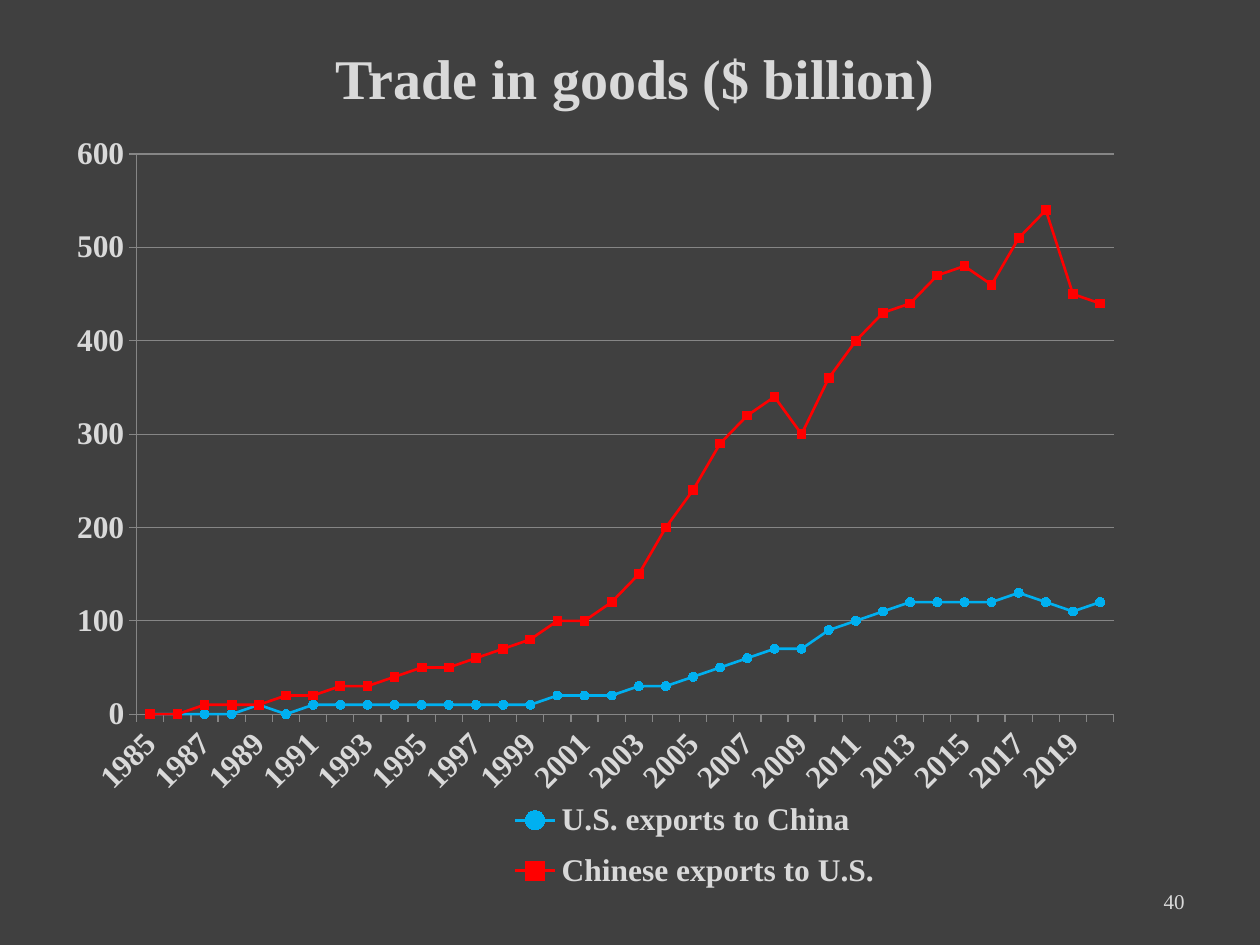
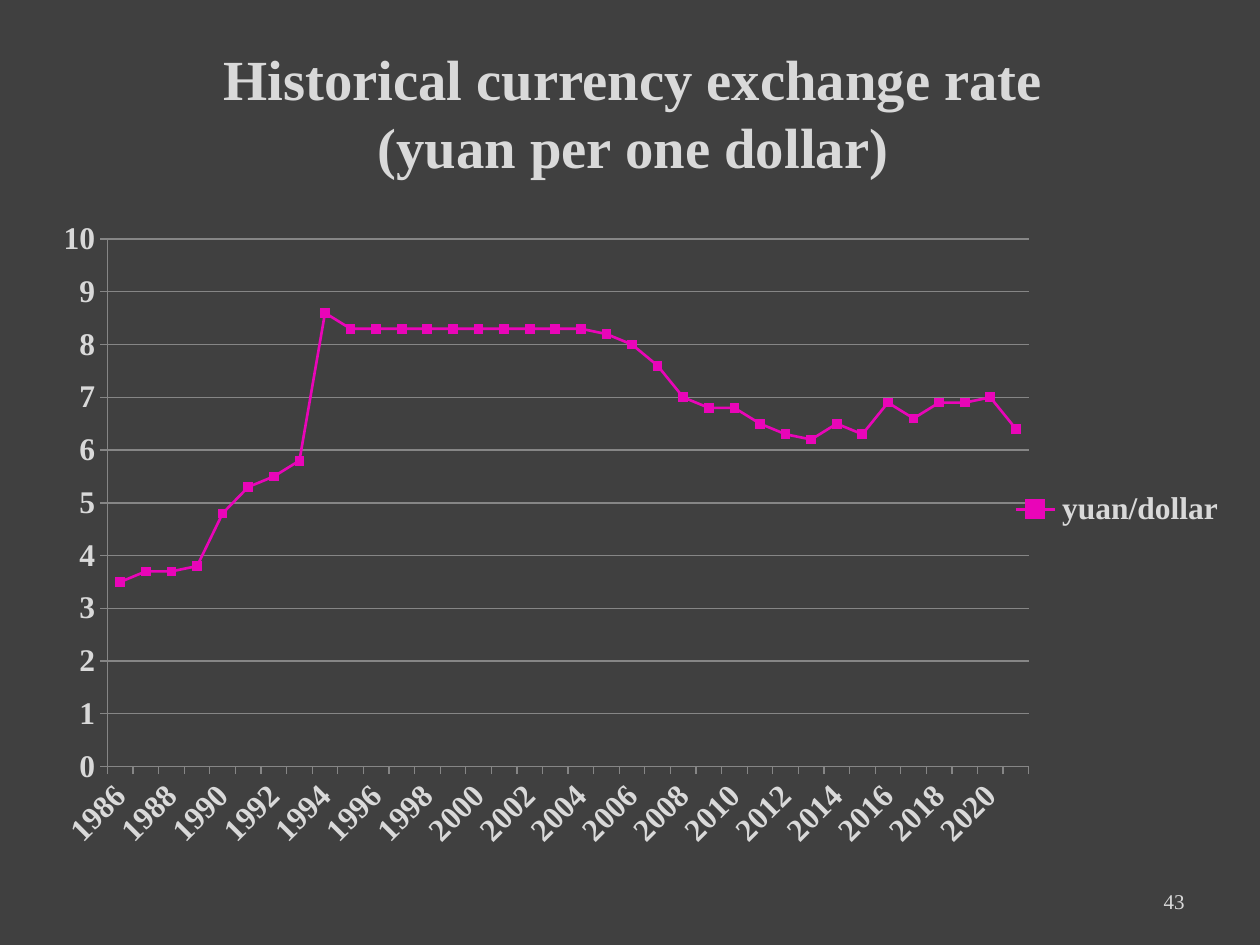
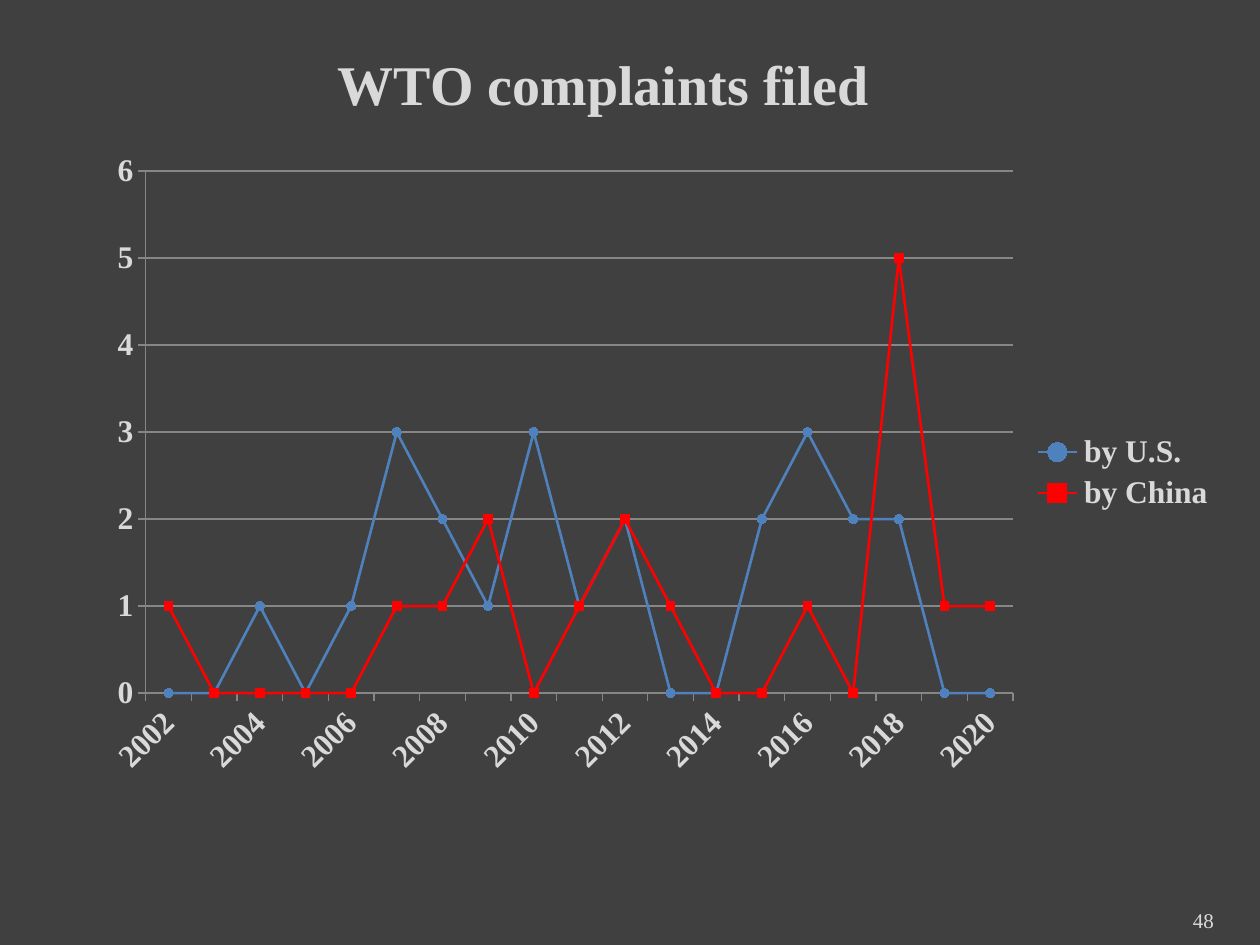
"""Build three line-chart slides on trade between the U.S. and China."""
from dataclasses import dataclass
from typing import Any

import lxml.etree
import pptx
import pptx.chart.data
import pptx.dml.color
import pptx.enum.chart
import pptx.enum.text
import pptx.oxml.ns
import pptx.util

Cm = pptx.util.Cm
Pt = pptx.util.Pt
Box = tuple[float, float, float, float]

FONT = "Times New Roman"
COLORS = {
    "back": "404040",
    "text": "D9D9D9",
    "grid": "868686",
    "cyan": "00B0F0",
    "blue": "4F81BD",
    "red": "FF0000",
    "pink": "E905B8",
}
MARKERS = {
    "circle": pptx.enum.chart.XL_MARKER_STYLE.CIRCLE,
    "square": pptx.enum.chart.XL_MARKER_STYLE.SQUARE,
}


@dataclass
class Series:
    name: str
    color: str
    marker: str
    values: list[float]


@dataclass
class ChartSlide:
    title: str
    title_size: float
    title_box: Box
    chart_box: Box
    plot_percent: Box
    legend_percent: Box
    first_year: int
    axis_max: float
    axis_step: float
    series: list[Series]
    number: str
    number_box: Box = (18.21, 17.65, 5.92, 1.02)


SLIDES = [
    ChartSlide(
        "Trade in goods ($ billion)", 32,
        (1.38, -0.03, 22.86, 3.18), (0.84, 2.54, 24.56, 15.75),
        (7.8, 3.6, 80.2, 71.7), (37.6, 84.6, 32, 15),
        1985, 600, 100,
        [
            Series("U.S. exports to China", "cyan", "circle",
                   [0, 0, 0, 0, 10, 0, 10, 10, 10, 10, 10, 10,
                    10, 10, 10, 20, 20, 20, 30, 30, 40, 50, 60, 70,
                    70, 90, 100, 110, 120, 120, 120, 120, 130, 120, 110, 120]),
            Series("Chinese exports to U.S.", "red", "square",
                   [0, 0, 10, 10, 10, 20, 20, 30, 30, 40, 50, 50,
                    60, 70, 80, 100, 100, 120, 150, 200, 240, 290, 320, 340,
                    300, 360, 400, 430, 440, 470, 480, 460, 510, 540, 450, 440]),
        ],
        "40",
    ),
    ChartSlide(
        "Historical currency exchange rate\n(yuan per one dollar)", 32.4,
        (1.33, 0.98, 22.86, 2.54), (0.66, 4.23, 24.31, 13.13),
        (6.2, 4.5, 76.4, 81), (80.9, 42, 18, 8),
        1986, 10, 1,
        [
            Series("yuan/dollar", "pink", "square",
                   [3.5, 3.7, 3.7, 3.8, 4.8, 5.3, 5.5, 5.8, 8.6, 8.3, 8.3, 8.3,
                    8.3, 8.3, 8.3, 8.3, 8.3, 8.3, 8.3, 8.2, 8, 7.6, 7, 6.8,
                    6.8, 6.5, 6.3, 6.2, 6.5, 6.3, 6.9, 6.6, 6.9, 6.9, 7, 6.4]),
        ],
        "43",
    ),
    ChartSlide(
        "WTO complaints filed", 32,
        (0.74, 0.51, 22.86, 2.34), (1.27, 2.85, 23.5, 13.34),
        (7.1, 4.5, 74.4, 78.9), (82.9, 43.4, 16, 13.3),
        2002, 6, 1,
        [
            Series("by U.S.", "blue", "circle",
                   [0, 0, 1, 0, 1, 3, 2, 1, 3, 1, 2, 0, 0, 2, 3, 2, 2, 0, 0]),
            Series("by China", "red", "square",
                   [1, 0, 0, 0, 0, 1, 1, 2, 0, 1, 2, 1, 0, 0, 1, 0, 5, 1, 1]),
        ],
        "48", (18.8, 18.03, 5.92, 1.02),
    ),
]


def rgb(name: str) -> pptx.dml.color.RGBColor:
    """Return a named colour."""
    return pptx.dml.color.RGBColor.from_string(COLORS[name])


def set_font(font: Any, size: float, bold: bool) -> None:
    """Apply the deck's typeface and text colour."""
    font.name, font.size, font.bold = FONT, Pt(size), bold
    font.color.rgb = rgb("text")


def set_text(sp: Any, text: str, *, size: float, align: str, bold: bool = False) -> None:
    """Fill a shape with one paragraph, breaking it at newlines."""
    tf = sp.text_frame
    tf.word_wrap = True
    tf.auto_size = pptx.enum.text.MSO_AUTO_SIZE.NONE
    tf.vertical_anchor = pptx.enum.text.MSO_ANCHOR.MIDDLE
    p = tf.paragraphs[0]
    p.alignment = pptx.enum.text.PP_ALIGN[align]
    for i, line in enumerate(text.split("\n")):
        if i:
            p.add_line_break()
        r = p.add_run()
        r.text = line
        set_font(r.font, size, bold)


def set_layout(parent: Any, index: int, percent: Box, inner: bool = False) -> None:
    """Place a chart part by percentages of the chart's size."""
    qn = pptx.oxml.ns.qn
    for old in parent.findall(qn("c:layout")):
        parent.remove(old)
    layout = lxml.etree.Element(qn("c:layout"))
    manual = lxml.etree.SubElement(layout, qn("c:manualLayout"))
    items = [("layoutTarget", "inner")] if inner else []
    items += [("xMode", "edge"), ("yMode", "edge")]
    items += [(tag, f"{value / 100:.3f}") for tag, value in zip("xywh", percent)]
    for tag, value in items:
        lxml.etree.SubElement(manual, qn(f"c:{tag}")).set("val", value)
    parent.insert(index, layout)


def style_axes(chart: Any, s: ChartSlide) -> None:
    """Set scale, gridlines and slanted labels for every second year."""
    cat, val = chart.category_axis, chart.value_axis
    for axis in (cat, val):
        axis.major_tick_mark = pptx.enum.chart.XL_TICK_MARK.OUTSIDE
        axis.minor_tick_mark = pptx.enum.chart.XL_TICK_MARK.NONE
        set_font(axis.tick_labels.font, 18, True)
    val.minimum_scale, val.maximum_scale, val.major_unit = 0, s.axis_max, s.axis_step
    val.tick_labels.number_format = "0"
    val.tick_labels.number_format_is_linked = False
    val.has_major_gridlines = True
    for line in (cat.format.line, val.format.line, val.major_gridlines.format.line):
        line.color.rgb = rgb("grid")
        line.width = Pt(0.75)
    qn = pptx.oxml.ns.qn
    cat_ax = cat._element
    cat_ax.find(f"{qn('c:txPr')}/{qn('a:bodyPr')}").set("rot", "-2700000")
    skip = lxml.etree.Element(qn("c:tickLblSkip"))
    skip.set("val", "2")
    cat_ax.find(qn("c:noMultiLvlLbl")).addprevious(skip)


def add_line_chart(slide: Any, s: ChartSlide) -> None:
    """Draw the line chart with its legend."""
    data = pptx.chart.data.CategoryChartData()
    data.categories = [str(s.first_year + i) for i in range(len(s.series[0].values))]
    for series in s.series:
        data.add_series(series.name, series.values)
    kind = pptx.enum.chart.XL_CHART_TYPE.LINE_MARKERS
    chart = slide.shapes.add_chart(kind, *map(Cm, s.chart_box), data).chart
    chart.has_title = False
    set_font(chart.font, 18, True)
    style_axes(chart, s)
    for series, plotted in zip(s.series, chart.plots[0].series):
        plotted.smooth = False
        plotted.format.line.color.rgb = rgb(series.color)
        plotted.format.line.width = Pt(1.5)
        marker = plotted.marker
        marker.style, marker.size = MARKERS[series.marker], 5
        marker.format.fill.solid()
        marker.format.fill.fore_color.rgb = rgb(series.color)
        marker.format.line.color.rgb = rgb(series.color)
    chart.has_legend = True
    legend = chart.legend
    legend.position = pptx.enum.chart.XL_LEGEND_POSITION.RIGHT
    legend.include_in_layout = False
    set_font(legend.font, 18, True)
    set_layout(legend._element, 1, s.legend_percent)
    set_layout(chart._chartSpace.chart.plotArea, 0, s.plot_percent, inner=True)


def add_slide(prs: Any, s: ChartSlide) -> None:
    """Add a slide with title, chart and page number."""
    slide = prs.slides.add_slide(prs.slide_layouts[5])
    title = slide.shapes.title
    title.left, title.top, title.width, title.height = map(Cm, s.title_box)
    set_text(title, s.title, size=s.title_size, align="CENTER", bold=True)
    add_line_chart(slide, s)
    number = slide.shapes.add_textbox(*map(Cm, s.number_box))
    set_text(number, s.number, size=12, align="RIGHT")


def main() -> None:
    """Build and save the deck."""
    prs = pptx.Presentation()
    prs.slide_width, prs.slide_height = Cm(25.4), Cm(19.05)
    fill = prs.slide_master.background.fill
    fill.solid()
    fill.fore_color.rgb = rgb("back")
    for s in SLIDES:
        add_slide(prs, s)
    prs.save("out.pptx")


if __name__ == "__main__":
    main()
